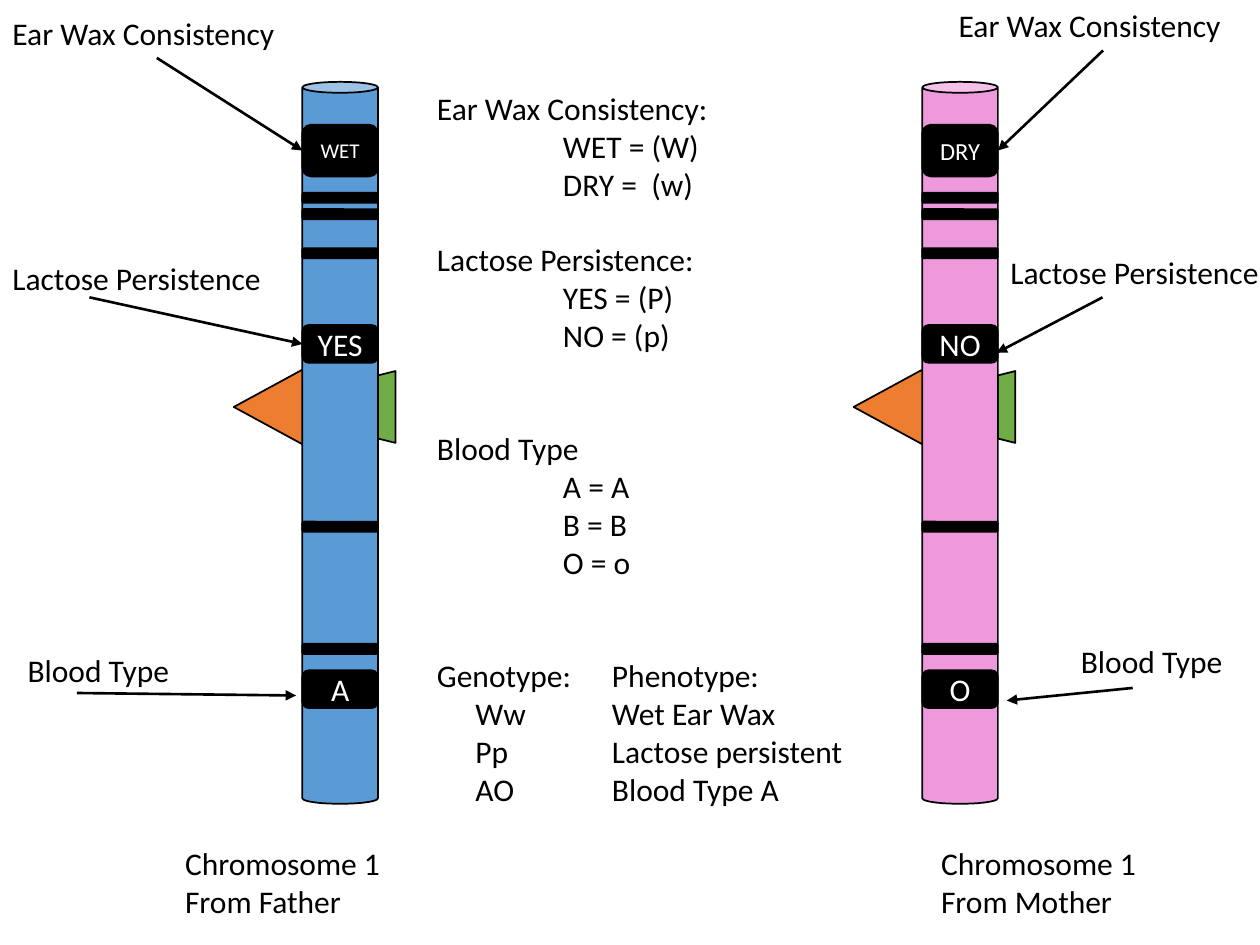
from lxml import etree
from pptx import Presentation
from pptx.dml.color import RGBColor
from pptx.enum.shapes import MSO_CONNECTOR, MSO_SHAPE
from pptx.enum.text import MSO_ANCHOR, PP_ALIGN
from pptx.oxml.ns import qn
from pptx.util import Pt

STRAIGHT = MSO_CONNECTOR.STRAIGHT
CAN = MSO_SHAPE.CAN
TRIANGLE = MSO_SHAPE.ISOSCELES_TRIANGLE
TRAPEZOID = MSO_SHAPE.TRAPEZOID
ROUNDED = MSO_SHAPE.ROUNDED_RECTANGLE
MIDDLE = MSO_ANCHOR.MIDDLE
LEFT, CENTER = PP_ALIGN.LEFT, PP_ALIGN.CENTER
LEFT_SIDE, BOTTOM_SIDE, RIGHT_SIDE = 1, 2, 3

COLORS = {
    "black": "000000",
    "white": "FFFFFF",
    "father": "5B9BD5",
    "mother": "EF99DD",
    "triangle": "ED7D31",
    "trapezoid": "70AD47",
}
LINE_HEIGHT = 21.6
CHROMOSOME_WIDTH = 43.2
BAND_TOPS = (110.16, 119.52, 141.84, 298.08, 367.92)
BAND_HEIGHT = 5.76
GENE_SPANS = ((71.28, 29.52), (185.76, 21.6), (383.04, 21.6))
LABEL_SIZE = (179.28, 28.8)


def color(name):
    return RGBColor.from_string(COLORS[name])


def write(paragraph, text, size=18, font_color="black", align=LEFT, stops=(), blank_lines=0):
    paragraph.alignment = align
    paragraph.space_before = Pt(blank_lines * LINE_HEIGHT)
    if stops:
        tab_list = etree.SubElement(paragraph._p.get_or_add_pPr(), qn("a:tabLst"))
        for stop in stops:
            etree.SubElement(tab_list, qn("a:tab"), pos=str(int(Pt(stop))), algn="l")
    run = paragraph.add_run()
    run.text = text
    run.font.name = "Calibri"
    run.font.size = Pt(size)
    run.font.color.rgb = color(font_color)


class SlideBuilder:
    def __init__(self, slide, font_size=18, outline=1, arrow_width=1.5):
        self.slide = slide
        self.font_size = font_size
        self.outline = outline
        self.arrow_width = arrow_width

    def shape(self, group, kind, left, top, width, height, fill, rotation=0):
        shape = group.shapes.add_shape(kind, Pt(left), Pt(top), Pt(width), Pt(height))
        shape.shadow.inherit = False
        shape.fill.solid()
        shape.fill.fore_color.rgb = color(fill)
        shape.line.color.rgb = color("black")
        shape.line.width = Pt(self.outline)
        shape.rotation = rotation
        return shape

    def gene(self, group, left, top, height, text, size):
        shape = self.shape(group, ROUNDED, left, top, CHROMOSOME_WIDTH, height, "black")
        frame = shape.text_frame
        frame.word_wrap = True
        frame.vertical_anchor = MIDDLE
        write(frame.paragraphs[0], text, size=size, font_color="white", align=CENTER)
        return shape

    def chromosome(self, left, fill, alleles):
        group = self.slide.shapes.add_group_shape()
        self.shape(group, TRAPEZOID, left + 27.6, 227.52, 41.04, 10.08, "trapezoid", 270)
        self.shape(group, TRIANGLE, left - 41.04, 211.68, 45.36, 41.76, "triangle", 270)
        can = self.shape(group, CAN, left, 46.8, CHROMOSOME_WIDTH, 412.56, fill)
        can.adjustments[0] = 0.145
        for top in BAND_TOPS:
            self.shape(group, ROUNDED, left, top, CHROMOSOME_WIDTH, BAND_HEIGHT, "black")
        return [
            self.gene(group, left, top, height, text, size)
            for (top, height), (text, size) in zip(GENE_SPANS, alleles)
        ]

    def text(self, left, top, width, height, rows):
        shape = self.slide.shapes.add_textbox(Pt(left), Pt(top), Pt(width), Pt(height))
        frame = shape.text_frame
        frame.word_wrap = True
        for index, (text, style) in enumerate(rows):
            paragraph = frame.add_paragraph() if index else frame.paragraphs[0]
            write(paragraph, text, size=self.font_size, **style)
        return shape

    def label(self, left, top, text):
        return self.text(left, top, *LABEL_SIZE, [(text, {})])

    def arrow(self, start, end, source=None, target=None, side=None):
        connector = self.slide.shapes.add_connector(STRAIGHT, *map(Pt, start + end))
        connector.line.color.rgb = color("black")
        connector.line.width = Pt(self.arrow_width)
        etree.SubElement(connector.line._get_or_add_ln(), qn("a:tailEnd"), type="triangle")
        etree.SubElement(connector._element.spPr, qn("a:effectLst"))
        if source is not None:
            connector.begin_connect(source, BOTTOM_SIDE)
        if target is not None:
            connector.end_connect(target, side)


def main():
    presentation = Presentation()
    presentation.slide_width = Pt(720)
    presentation.slide_height = Pt(540)
    slide = presentation.slides.add_slide(presentation.slide_layouts[6])
    builder = SlideBuilder(slide)

    wet, yes, _ = builder.chromosome(172.8, "father", (("WET", 12), ("YES", 18), ("A", 18)))
    dry, _, _ = builder.chromosome(527.04, "mother", (("DRY", 14), ("NO", 18), ("O", 18)))

    caption = {"stops": (432,)}
    builder.text(98.64, 478.8, 615.6, 51.12, [
        ("Chromosome 1\tChromosome 1", caption),
        ("From Father\tFrom Mother", caption),
    ])

    father_wax = builder.label(0, 4.32, "Ear Wax Consistency")
    mother_wax = builder.label(540.72, 0, "Ear Wax Consistency")
    builder.label(0, 144.72, "Lactose Persistence")
    builder.label(570.24, 141.12, "Lactose Persistence")
    builder.label(8.64, 368.64, "Blood Type")
    builder.label(610.56, 363.6, "Blood Type")

    builder.arrow((90, 33.12), (172.8, 86), father_wax, wet, LEFT_SIDE)
    builder.arrow((630, 28.8), (570.24, 86), mother_wax, dry, RIGHT_SIDE)
    builder.arrow((51.12, 169.92), (172.8, 196.56), target=yes, side=LEFT_SIDE)
    builder.arrow((630, 169.92), (569.52, 201.6))
    builder.arrow((43.92, 396), (169.2, 397.44))
    builder.arrow((647.28, 393.12), (575.28, 400.32))

    allele = {"stops": (72,)}
    result = {"stops": (22, 100)}
    builder.text(242.64, 47.52, 254.88, 421.92, [
        ("Ear Wax Consistency:", {}),
        ("\tWET = (W)", allele),
        ("\tDRY =  (w)", allele),
        ("Lactose Persistence:", {"blank_lines": 1}),
        ("\tYES = (P)", allele),
        ("\tNO = (p)", allele),
        ("Blood Type", {"blank_lines": 2}),
        ("\tA = A", allele),
        ("\tB = B", allele),
        ("\tO = o", allele),
        ("Genotype:\tPhenotype:", {"blank_lines": 2, **result}),
        ("\tWw\tWet Ear Wax", result),
        ("\tPp\tLactose persistent", result),
        ("\tAO\tBlood Type A", result),
    ])

    presentation.save("out.pptx")


if __name__ == "__main__":
    main()
